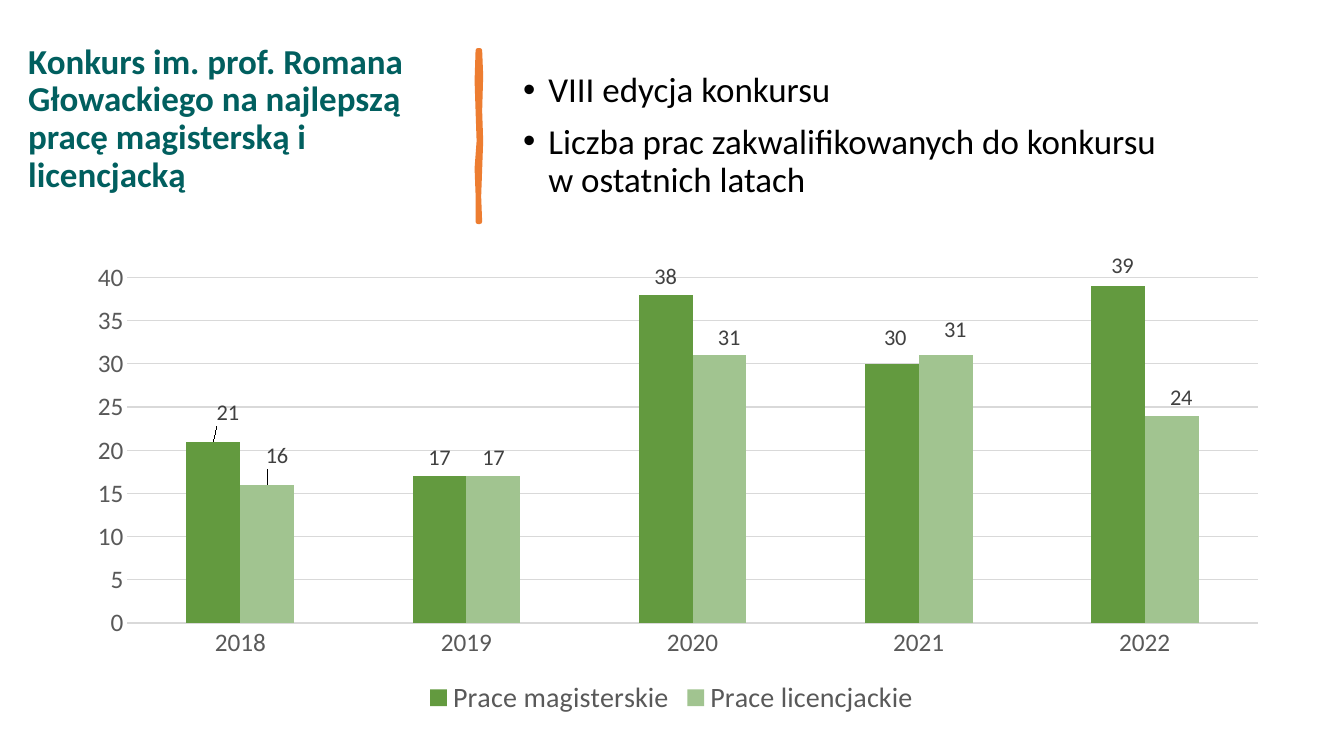
from lxml.etree import SubElement
from pptx import Presentation
from pptx.chart.data import CategoryChartData
from pptx.dml.color import RGBColor
from pptx.enum.chart import XL_CHART_TYPE, XL_LABEL_POSITION, XL_LEGEND_POSITION, XL_TICK_MARK
from pptx.enum.text import MSO_ANCHOR, MSO_AUTO_SIZE, PP_ALIGN
from pptx.oxml import parse_xml
from pptx.oxml.ns import nsdecls, qn
from pptx.util import Inches, Pt

COLORS = {
    "heading": "015F5F", "body": "000000", "stroke": "ED7D31",
    "axis": "595959", "grid": "D9D9D9", "label": "404040",
    "master": "639A3F", "bachelor": "A1C490",
}
FONT = "Calibri"
YEARS = ["2018", "2019", "2020", "2021", "2022"]
THESES = [
    ("Prace magisterskie", [21, 17, 38, 30, 39], "master",
     {0: (0.012, -0.024), 3: (0.003, -0.017), 4: (0.004, -0.004)}),
    ("Prace licencjackie", [16, 17, 31, 31, 24], "bachelor",
     {0: (0.008, -0.024), 2: (0.008, 0.002), 3: (0.008, -0.017), 4: (0.008, 0)}),
]
STROKE_OUTLINE = [
    (4.76, 0.5), (4.77, 0.75), (4.76, 1.1), (4.77, 1.4), (4.76, 1.68), (4.75, 1.95), (4.76, 2.2),
    (4.74, 2.2), (4.74, 1.93), (4.73, 1.67), (4.75, 1.4), (4.74, 1.1), (4.73, 0.8), (4.74, 0.5),
]


def color(name):
    """Return the named palette colour."""
    return RGBColor.from_string(COLORS[name])


def style_font(font, size, tone, bold=False):
    """Apply the slide's typeface with a size and colour."""
    font.name, font.size, font.bold = FONT, Pt(size), bold
    font.color.rgb = color(tone)


def write(frame, lines, size=25, tone="body", bold=False, space=0, bullet=False):
    """Fill a text frame with equally formatted paragraphs."""
    frame.word_wrap = True
    frame.auto_size = MSO_AUTO_SIZE.NONE
    frame.vertical_anchor = MSO_ANCHOR.MIDDLE
    for index, line in enumerate(lines):
        paragraph = frame.add_paragraph() if index else frame.paragraphs[0]
        paragraph.text = line
        paragraph.alignment = PP_ALIGN.LEFT
        paragraph.line_spacing = 0.9
        paragraph.space_before = Pt(space)
        for run in paragraph.runs:
            style_font(run.font, size, tone, bold)
        if bullet:
            properties = paragraph._p.get_or_add_pPr()
            properties.set("marL", str(Inches(0.25)))
            properties.set("indent", str(Inches(-0.25)))
            SubElement(properties, qn("a:buFont")).set("typeface", "Arial")
            SubElement(properties, qn("a:buChar")).set("char", "•")


def manual_layout(x, y, size=None):
    """Build a chart layout: an offset, or an inner plot area when sized."""
    fields = [("x", x), ("y", y)]
    if size:
        fields = [("layoutTarget", "inner"), ("xMode", "edge"), ("yMode", "edge"),
                  *fields, ("w", size[0]), ("h", size[1])]
    body = "".join(f'<c:{tag} val="{value}"/>' for tag, value in fields)
    return parse_xml(f'<c:layout {nsdecls("c")}><c:manualLayout>{body}</c:manualLayout></c:layout>')


class ContestSlide:
    """Holds the slide and adds each kind of element in its style."""

    def __init__(self, deck):
        """Start a title-only slide."""
        self.slide = deck.slides.add_slide(deck.slide_layouts[5])

    def heading(self, text, box):
        """Place and format the title."""
        title = self.slide.shapes.title
        title.left, title.top, title.width, title.height = map(Inches, box)
        write(title.text_frame, [text], tone="heading", bold=True)

    def bullets(self, lines, box):
        """Add a bulleted list."""
        body = self.slide.shapes.add_textbox(*map(Inches, box))
        write(body.text_frame, lines, space=10, bullet=True)

    def brush_stroke(self, outline):
        """Add the hand-drawn divider."""
        start, *rest = [(Inches(x), Inches(y)) for x, y in outline]
        builder = self.slide.shapes.build_freeform(*start)
        builder.add_line_segments(rest, close=True)
        divider = builder.convert_to_shape()
        divider.shadow.inherit = False
        divider.fill.solid()
        divider.fill.fore_color.rgb = color("stroke")
        divider.line.color.rgb = color("stroke")
        divider.line.width = Pt(3.25)

    def columns(self, categories, groups, box):
        """Add the clustered column chart."""
        data = CategoryChartData()
        data.categories = categories
        for name, values, *_ in groups:
            data.add_series(name, values)
        chart = self.slide.shapes.add_chart(
            XL_CHART_TYPE.COLUMN_CLUSTERED, *map(Inches, box), data).chart
        chart.has_title = False
        style_font(chart.font, 10, "body")
        chart.has_legend = True
        chart.legend.position = XL_LEGEND_POSITION.BOTTOM
        chart.legend.include_in_layout = False
        style_font(chart.legend.font, 20, "axis")
        self.axes(chart)

        plot = chart.plots[0]
        plot.gap_width, plot.overlap, plot.vary_by_categories = 219, 0, False
        for series, (_, _, tone, offsets) in zip(plot.series, groups):
            self.series(series, tone, offsets)
        plot_area = chart._chartSpace.chart.plotArea
        for layout in plot_area.findall(qn("c:layout")):
            plot_area.remove(layout)
        plot_area.insert(0, manual_layout(0.048, 0.051, (0.939, 0.74)))

    def axes(self, chart):
        """Format both axes and the gridlines."""
        for axis in (chart.category_axis, chart.value_axis):
            axis.major_tick_mark = axis.minor_tick_mark = XL_TICK_MARK.NONE
            style_font(axis.tick_labels.font, 18, "axis")
        value_axis = chart.value_axis
        value_axis.minimum_scale, value_axis.maximum_scale, value_axis.major_unit = 0, 40, 5
        value_axis.format.line.fill.background()
        for line in (chart.category_axis.format.line, value_axis.major_gridlines.format.line):
            line.color.rgb = color("grid")
            line.width = Pt(0.75)

    def series(self, series, tone, offsets):
        """Colour a series and place its value labels."""
        series.format.fill.solid()
        series.format.fill.fore_color.rgb = color(tone)
        series.invert_if_negative = False
        labels = series.data_labels
        labels.show_value = True
        labels.position = XL_LABEL_POSITION.OUTSIDE_END
        style_font(labels.font, 16, "label")
        for index, offset in offsets.items():
            label = series.points[index].data_label
            style_font(label.font, 16, "label")
            label.position = XL_LABEL_POSITION.OUTSIDE_END
            entry = series._element.xpath(f"c:dLbls/c:dLbl[c:idx/@val='{index}']")[0]
            entry.insert(1, manual_layout(*offset))


def main():
    """Build and save the contest slide."""
    deck = Presentation()
    deck.slide_width, deck.slide_height = Inches(13.33), Inches(7.5)
    contest = ContestSlide(deck)
    contest.heading("Konkurs im. prof. Romana Głowackiego na najlepszą pracę magisterską i licencjacką",
                    (0.18, 0.22, 4.56, 1.93))
    contest.brush_stroke(STROKE_OUTLINE)
    contest.bullets(["VIII edycja konkursu",
                     "Liczba prac zakwalifikowanych do konkursu\nw ostatnich latach"],
                    (5.09, 0.55, 7.54, 1.6))
    contest.columns(YEARS, THESES, (0.69, 2.51, 11.94, 4.64))
    deck.save("out.pptx")


if __name__ == "__main__":
    main()
